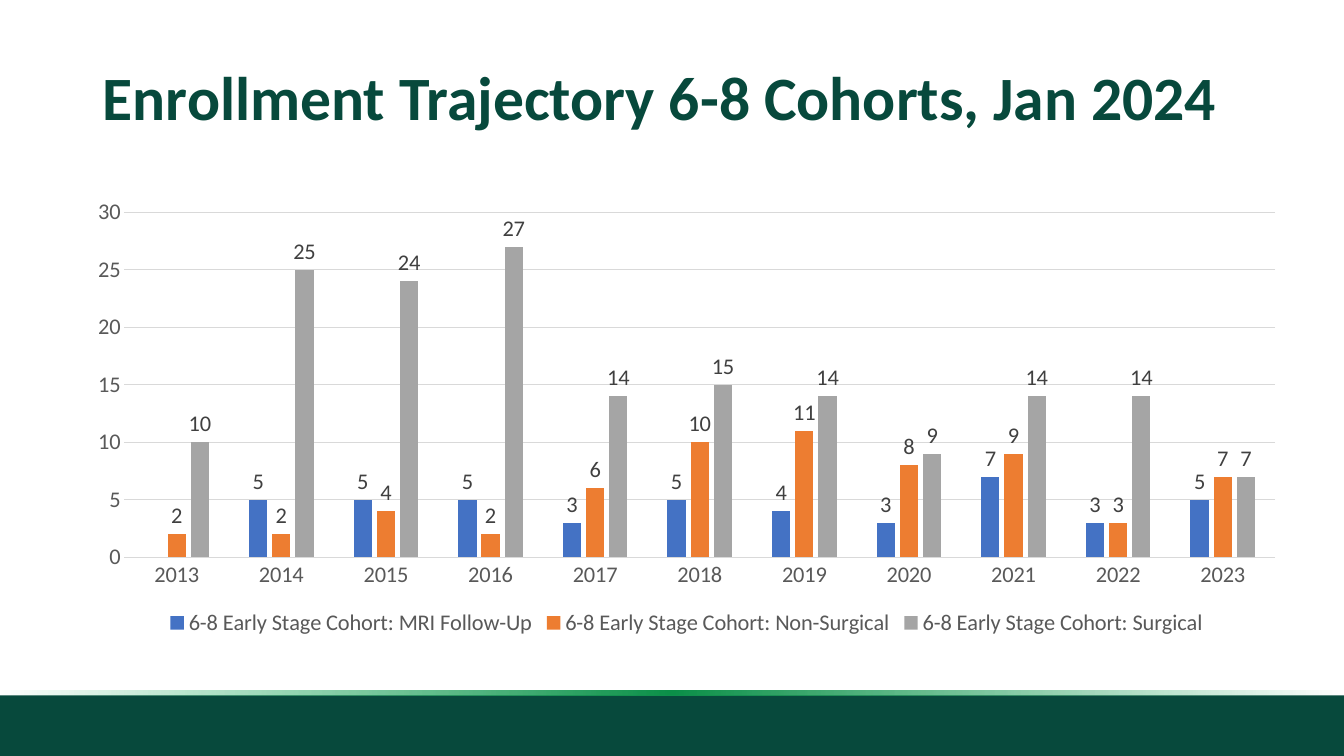
import lxml.etree
import pptx
import pptx.chart.data
import pptx.dml.color
import pptx.enum.chart
import pptx.enum.shapes
import pptx.enum.text
import pptx.oxml
import pptx.oxml.ns
import pptx.util

Inches = pptx.util.Inches
Pt = pptx.util.Pt
RGBColor = pptx.dml.color.RGBColor

FONT = "Calibri"
DARK_GREEN = RGBColor(0x07, 0x49, 0x3C)
GLOW_START = RGBColor(0x0D, 0x9D, 0x4F)
GLOW_MIDDLE = RGBColor(0x0C, 0x90, 0x49)
GLOW_END = RGBColor(0x0F, 0xAB, 0x56)
GRID = RGBColor(0xD9, 0xD9, 0xD9)
AXIS_TEXT = RGBColor(0x59, 0x59, 0x59)
LABEL_TEXT = RGBColor(0x40, 0x40, 0x40)
BLUE = RGBColor(0x44, 0x72, 0xC4)
ORANGE = RGBColor(0xED, 0x7D, 0x31)
GREY = RGBColor(0xA5, 0xA5, 0xA5)

YEARS = [str(year) for year in range(2013, 2024)]
COHORTS = [
    ("MRI Follow-Up", BLUE, [None, 5, 5, 5, 3, 5, 4, 3, 7, 3, 5]),
    ("Non-Surgical", ORANGE, [2, 2, 4, 2, 6, 10, 11, 8, 9, 3, 7]),
    ("Surgical", GREY, [10, 25, 24, 27, 14, 15, 14, 9, 14, 14, 7]),
]


def set_font(font, size, color, bold=False):
    """Apply the deck font with a size, colour and weight."""
    font.name = FONT
    font.size = Pt(size)
    font.bold = bold
    font.color.rgb = color


def add_bar(s, left, top, width, height):
    """Add a plain dark green rectangle and return it."""
    sp = s.shapes.add_shape(
        pptx.enum.shapes.MSO_SHAPE.RECTANGLE,
        Inches(left), Inches(top), Inches(width), Inches(height))
    sp.shadow.inherit = False
    sp.fill.solid()
    sp.fill.fore_color.rgb = DARK_GREEN
    sp.line.fill.background()
    return sp


def fade_ends(sp):
    """Fill a shape with a green gradient that is transparent at both ends."""
    stops = "".join(
        f'<a:gs pos="{pos}"><a:srgbClr val="{color}"><a:alpha val="{alpha}"/>'
        "</a:srgbClr></a:gs>"
        for pos, color, alpha in [(0, GLOW_START, 0), (50000, GLOW_MIDDLE, 100000),
                                  (100000, GLOW_END, 0)])
    grad = pptx.oxml.parse_xml(
        f'<a:gradFill {pptx.oxml.ns.nsdecls("a")} rotWithShape="1">'
        f'<a:gsLst>{stops}</a:gsLst><a:lin ang="10800000" scaled="0"/></a:gradFill>')
    solid = sp.element.spPr.find(pptx.oxml.ns.qn("a:solidFill"))
    sp.element.spPr.replace(solid, grad)


def add_footer(s, left, top, width, height):
    """Draw the footer band with a fading strip along its top."""
    strip = 0.05
    add_bar(s, left, top + strip, width, height - strip)
    fade_ends(add_bar(s, left, top, width, strip))


def add_title(s, left, top, width, height):
    """Place and fill the title placeholder."""
    sp = s.shapes.title
    sp.left, sp.top = Inches(left), Inches(top)
    sp.width, sp.height = Inches(width), Inches(height)
    tf = sp.text_frame
    tf.word_wrap = True
    tf.auto_size = pptx.enum.text.MSO_AUTO_SIZE.NONE
    tf.vertical_anchor = pptx.enum.text.MSO_ANCHOR.MIDDLE
    p = tf.paragraphs[0]
    p.alignment = pptx.enum.text.PP_ALIGN.LEFT
    p.line_spacing = 0.9
    r = p.add_run()
    r.text = "Enrollment Trajectory 6-8 Cohorts, Jan 2024"
    set_font(r.font, 44, DARK_GREEN, bold=True)


def format_axes(chart):
    """Style both axes, the gridlines and the value scale."""
    for axis in (chart.category_axis, chart.value_axis):
        axis.major_tick_mark = pptx.enum.chart.XL_TICK_MARK.NONE
        axis.minor_tick_mark = pptx.enum.chart.XL_TICK_MARK.NONE
        set_font(axis.tick_labels.font, 16, AXIS_TEXT)
    grid = chart.value_axis.major_gridlines.format.line
    for line in (chart.category_axis.format.line, grid):
        line.color.rgb = GRID
        line.width = Pt(0.75)
    chart.value_axis.format.line.fill.background()
    chart.value_axis.minimum_scale = 0
    chart.value_axis.maximum_scale = 30
    chart.value_axis.major_unit = 5


def format_series(plot):
    """Colour the columns and label them with their values."""
    plot.gap_width = 219
    plot.overlap = -27
    plot.vary_by_categories = False
    for series, (_, color, _) in zip(plot.series, COHORTS):
        series.format.fill.solid()
        series.format.fill.fore_color.rgb = color
        series.invert_if_negative = False
        labels = series.data_labels
        labels.show_value = True
        labels.position = pptx.enum.chart.XL_LABEL_POSITION.OUTSIDE_END
        set_font(labels.font, 16, LABEL_TEXT)


def add_enrollment_chart(s, left, top, width, height):
    """Add the clustered column chart of enrollment by year."""
    data = pptx.chart.data.CategoryChartData()
    data.categories = YEARS
    for name, _, values in COHORTS:
        data.add_series(f"6-8 Early Stage Cohort: {name}", values)
    chart = s.shapes.add_chart(
        pptx.enum.chart.XL_CHART_TYPE.COLUMN_CLUSTERED,
        Inches(left), Inches(top), Inches(width), Inches(height), data).chart
    chart.has_title = False
    set_font(chart.font, 16, AXIS_TEXT)
    chart.has_legend = True
    chart.legend.position = pptx.enum.chart.XL_LEGEND_POSITION.BOTTOM
    chart.legend.include_in_layout = False
    set_font(chart.legend.font, 16, AXIS_TEXT)
    format_axes(chart)
    format_series(chart.plots[0])


def main():
    """Build and save the enrollment slide."""
    prs = pptx.Presentation()
    prs.slide_width, prs.slide_height = Inches(13.33), Inches(7.5)
    s = prs.slides.add_slide(prs.slide_layouts.get_by_name("Title Only"))
    add_footer(s, 0, 6.85, 13.33, 0.65)
    add_title(s, 0.92, 0.4, 11.5, 1.19)
    add_enrollment_chart(s, 0.73, 1.88, 12.16, 4.48)
    prs.save("out.pptx")


if __name__ == "__main__":
    main()
